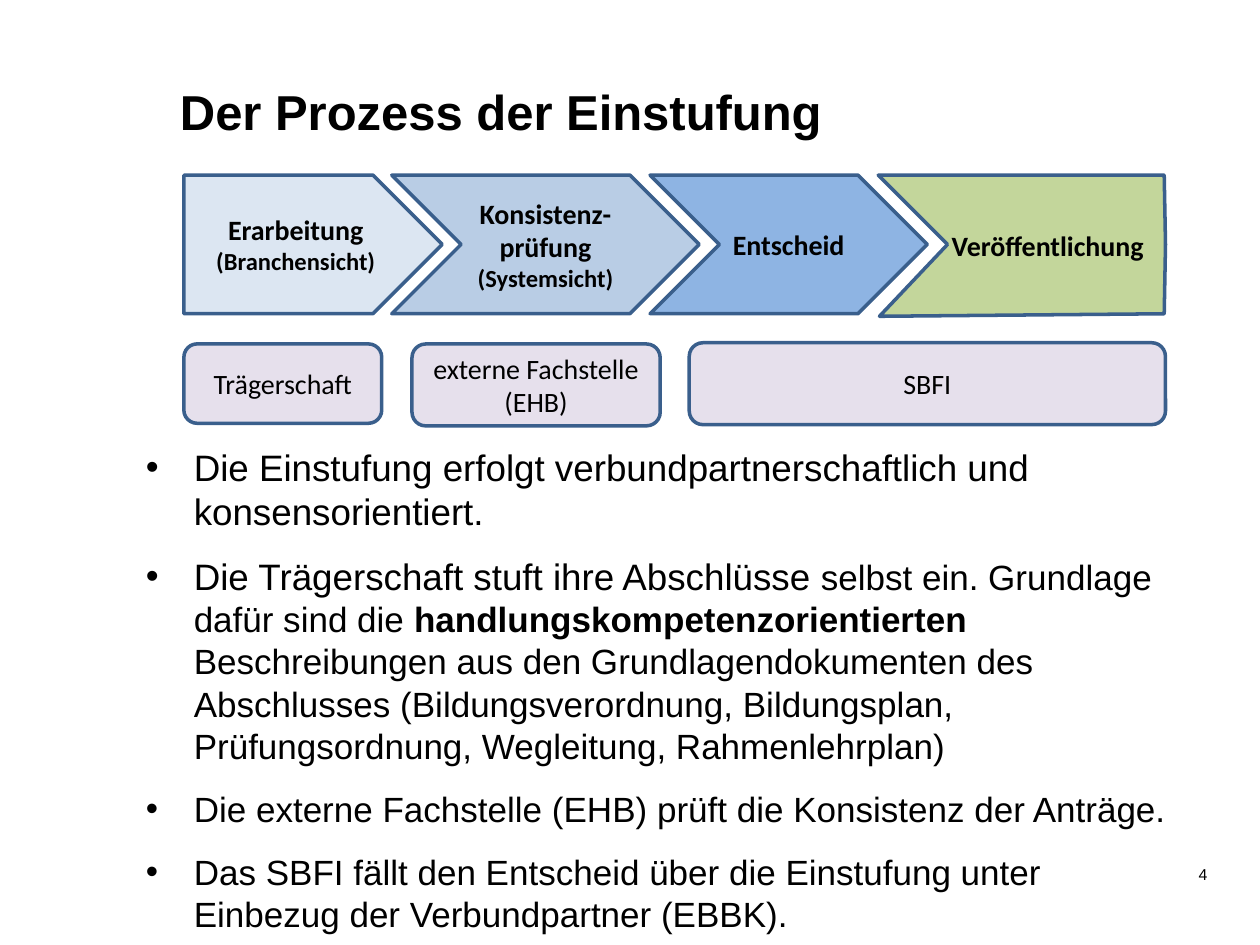
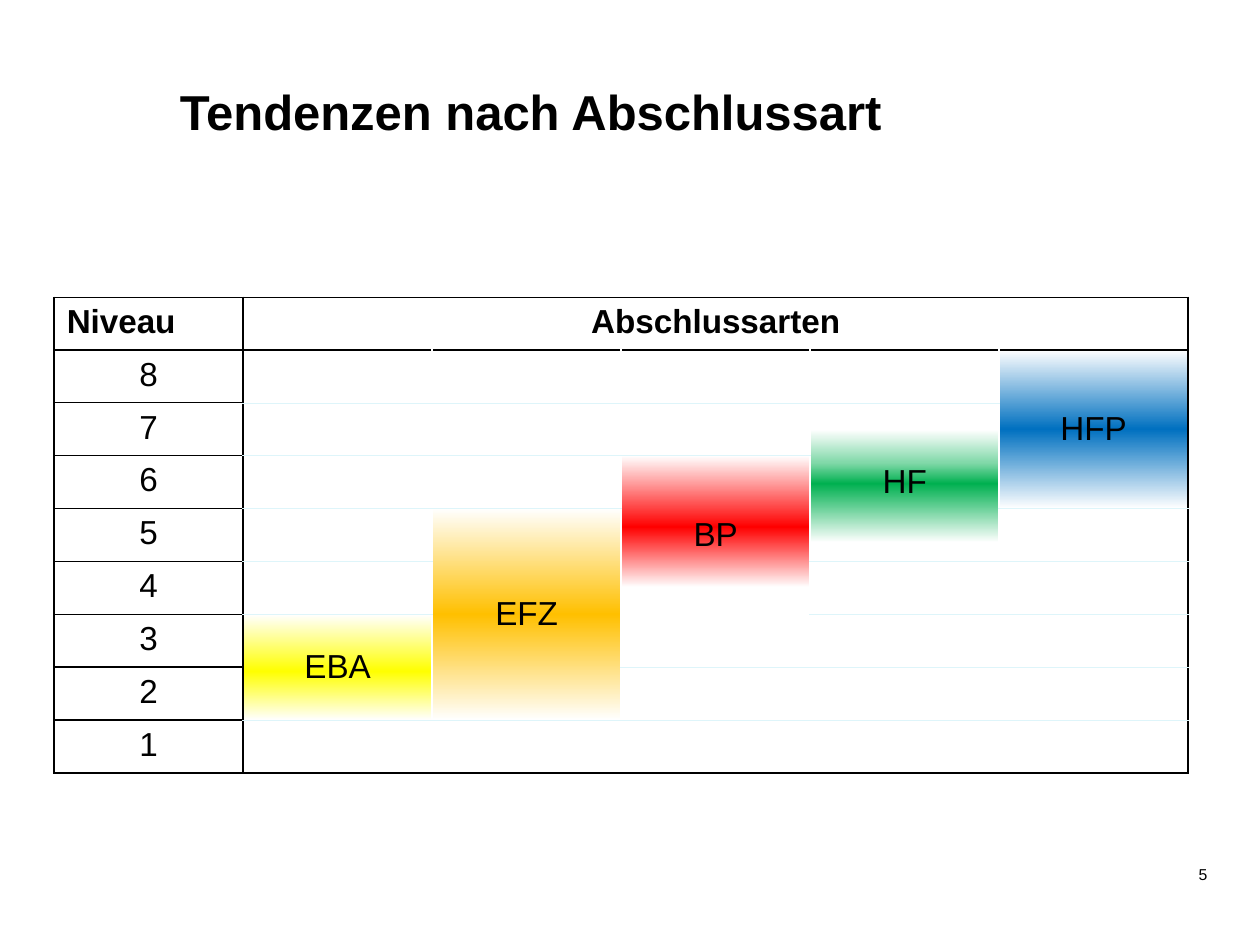
from dataclasses import dataclass

from lxml import etree
from pptx import Presentation
from pptx import util as u
from pptx.dml.color import RGBColor
from pptx.enum import shapes, text
from pptx.oxml import ns

COLS, ROWS = 100, 75
CELL = u.Inches(0.1)
CENTER, RIGHT = text.PP_ALIGN.CENTER, text.PP_ALIGN.RIGHT
MIDDLE = text.MSO_ANCHOR.MIDDLE


@dataclass(frozen=True)
class Theme:
    body_font: str = "Arial"
    shape_font: str = "Calibri"
    ink: str = "000000"
    paper: str = "FFFFFF"
    outline: str = "3A5F8C"
    steps: tuple = ("DCE6F2", "B9CDE5", "8EB4E3", "C3D69B")
    actor: str = "E6E0EC"
    hairline: str = "DEF5FA"
    title: float = 28
    lead: float = 21
    body: float = 20
    table: float = 19
    label: float = 16
    note: float = 14
    number: float = 9


T = Theme()

BULLETS = [
    [("Die Einstufung erfolgt verbundpartnerschaftlich und konsensorientiert.", T.lead, False)],
    [("Die Trägerschaft stuft ihre Abschlüsse ", T.lead, False),
     ("selbst ein. Grundlage dafür sind die ", T.body, False),
     ("handlungskompetenzorientierten ", T.body, True),
     ("Beschreibungen aus den Grundlagendokumenten des Abschlusses (Bildungsverordnung, "
      "Bildungsplan, Prüfungsordnung, Wegleitung, Rahmenlehrplan)", T.body, False)],
    [("Die externe Fachstelle (EHB) prüft die Konsistenz der Anträge.", T.body, False)],
    [("Das SBFI fällt den Entscheid über die Einstufung unter Einbezug der "
      "Verbundpartner (EBBK).", T.body, False)],
]

# name, column, first row, last row, gradient stops
DEGREES = [
    ("EBA", 1, 6, 7, [(0, T.paper), (54, "FFFF00"), (100, T.paper)]),
    ("EFZ", 2, 4, 7, [(0, T.paper), (50, "FFC000"), (100, T.paper)]),
    ("BP", 3, 3, 5, [(0, T.paper), (45, "FF0000"), (83, T.paper)]),
    ("HF", 4, 2, 4, [(17, T.paper), (38, "80D8A8"), (51, "00B050"), (88, T.paper)]),
    ("HFP", 5, 1, 3, [(0, T.paper), (50, "0070C0"), (100, T.paper)]),
]


def grid(*units):
    """Turn grid columns and rows into lengths."""
    return [round(n * CELL) for n in units]


def rgb(color):
    return RGBColor.from_string(color)


def add_run(p, content, size=T.body, font=T.body_font, bold=False):
    r = p.add_run()
    r.text = content
    r.font.size, r.font.name, r.font.bold = u.Pt(size), font, bold
    r.font.color.rgb = rgb(T.ink)


def write(tf, content, align=None, **style):
    """Write one paragraph into an empty frame, or add one after the others."""
    p = tf.paragraphs[-1]
    if p.runs:
        p = tf.add_paragraph()
    p.alignment = align
    add_run(p, content, **style)
    return p


def text_frame(s, *box):
    tf = s.shapes.add_textbox(*grid(*box)).text_frame
    tf.word_wrap = True
    return tf


def add_slide(prs, title, number):
    s = prs.slides.add_slide(prs.slide_layouts[6])
    tf = text_frame(s, 13.3, 5.5, 86.7, 7.8)
    tf.margin_top = u.Inches(0.1)
    write(tf, title, size=T.title, bold=True)
    p = write(text_frame(s, 72.4, 68, 24.4, 4), str(number), align=RIGHT, size=T.number)
    p.line_spacing = u.Pt(12)
    return s


def style_shape(sp, fill, lines):
    """Fill, outline and label a shape; lines are (text, size, bold)."""
    sp.shadow.inherit = False
    sp.fill.solid()
    sp.fill.fore_color.rgb = rgb(fill)
    sp.line.color.rgb = rgb(T.outline)
    sp.line.width = u.Pt(2)
    tf = sp.text_frame
    tf.word_wrap = True
    tf.vertical_anchor = MIDDLE
    for content, size, bold in lines:
        write(tf, content, align=CENTER, size=size, font=T.shape_font, bold=bold)


def add_process(s):
    kinds = shapes.MSO_SHAPE
    steps = [
        (kinds.PENTAGON, 14.6, 20.5, "Erarbeitung", "(Branchensicht)"),
        (kinds.CHEVRON, 31.1, 24.4, "Konsistenz-prüfung", "(Systemsicht)"),
        (kinds.CHEVRON, 51.6, 22, "Entscheid", None),
    ]
    for (kind, x, w, name, note), fill in zip(steps, T.steps):
        lines = [(name, T.label, True)] + ([(note, T.note, True)] if note else [])
        style_shape(s.shapes.add_shape(kind, *grid(x, 13.9, w, 11)), fill, lines)

    outline = [(92.4, 13.9), (92.5, 19.4), (92.4, 24.9), (69.8, 25.1), (75.2, 19.4)]
    fb = s.shapes.build_freeform(*grid(69.7, 13.9))
    fb.add_line_segments([grid(*point) for point in outline], close=True)
    publication = fb.convert_to_shape()
    style_shape(publication, T.steps[-1], [("Veröffentlichung", T.label, True)])
    publication.text_frame.margin_left = u.Inches(0.51)


def add_actors(s):
    actors = [
        (14.6, 27.3, 15.7, 6.3, ["Trägerschaft"]),
        (32.7, 27.3, 19.7, 6.5, ["externe Fachstelle", "(EHB)"]),
        (54.7, 27.2, 37.8, 6.5, ["SBFI"]),
    ]
    for *box, names in actors:
        sp = s.shapes.add_shape(shapes.MSO_SHAPE.ROUNDED_RECTANGLE, *grid(*box))
        style_shape(sp, T.actor, [(name, T.label, False) for name in names])


def add_bullets(s, items):
    tf = text_frame(s, 10.6, 34.8, 84.7, 40.2)
    for i, runs in enumerate(items):
        p = tf.paragraphs[0] if i == 0 else tf.add_paragraph()
        pPr = p._p.get_or_add_pPr()
        indent = u.Inches(0.38)
        pPr.set("marL", str(indent))
        pPr.set("indent", str(-indent))
        p.space_after = u.Pt(12)
        etree.SubElement(pPr, ns.qn("a:buFont"), typeface=T.body_font)
        etree.SubElement(pPr, ns.qn("a:buChar"), char="•")
        for content, size, bold in runs:
            add_run(p, content, size=size, bold=bold)


def add_color(parent, color):
    etree.SubElement(parent, ns.qn("a:srgbClr"), val=color)


def set_borders(cell, row, col):
    """Black frame and level column, white between degrees, hairlines between levels."""
    black, white, hair = (T.ink, 1), (T.paper, 1), (T.hairline, 0.25)
    framed = row == 0 or col == 0

    def level_edge(edge):
        if framed or edge in (1, 9):
            return black
        return white if (edge, col) == (6, 3) else hair

    edges = {
        "L": black if framed or col == 1 else white,
        "R": black if framed or col == 5 else white,
        "T": level_edge(row),
        "B": level_edge(row + 1),
    }
    tcPr = cell._tc.get_or_add_tcPr()
    for side, (color, width) in edges.items():
        ln = etree.SubElement(tcPr, ns.qn(f"a:ln{side}"), w=str(u.Pt(width)))
        add_color(etree.SubElement(ln, ns.qn("a:solidFill")), color)


def fill_gradient(cell, stops):
    """Replace the cell's fill by a vertical gradient."""
    cell.fill.background()
    tcPr = cell._tc.get_or_add_tcPr()
    tcPr.remove(tcPr.find(ns.qn("a:noFill")))
    grad = etree.SubElement(tcPr, ns.qn("a:gradFill"), rotWithShape="1")
    gs_list = etree.SubElement(grad, ns.qn("a:gsLst"))
    for share, color in stops:
        add_color(etree.SubElement(gs_list, ns.qn("a:gs"), pos=str(share * 1000)), color)
    etree.SubElement(grad, ns.qn("a:lin"), ang="5400000", scaled="0")


def add_level_table(s):
    table = s.shapes.add_table(9, 6, *grid(4.3, 23.6, 90, 37.7)).table
    table.first_row = table.horz_banding = False
    for column in table.columns:
        column.width = u.Inches(1.5)
    for i, row in enumerate(table.rows):
        row.height = u.Inches(0.42 if i else 0.41)
        for j, cell in enumerate(row.cells):
            set_borders(cell, i, j)
            cell.fill.solid()
            cell.fill.fore_color.rgb = rgb(T.paper)

    write(table.cell(0, 0).text_frame, "Niveau", size=T.table, bold=True)
    table.cell(0, 1).merge(table.cell(0, 5))
    write(table.cell(0, 1).text_frame, "Abschlussarten", align=CENTER, size=T.table, bold=True)
    for row in range(1, 9):
        write(table.cell(row, 0).text_frame, str(9 - row), align=CENTER, size=T.table)
    for name, col, first, last, stops in DEGREES:
        cell = table.cell(first, col)
        cell.merge(table.cell(last, col))
        cell.vertical_anchor = MIDDLE
        fill_gradient(cell, stops)
        write(cell.text_frame, name, align=CENTER, size=T.table)


def main():
    prs = Presentation()
    prs.slide_width, prs.slide_height = grid(COLS, ROWS)

    s = add_slide(prs, "Der Prozess der Einstufung", 4)
    add_bullets(s, BULLETS)
    add_process(s)
    add_actors(s)

    s = add_slide(prs, "Tendenzen nach Abschlussart", 5)
    add_level_table(s)

    prs.save("out.pptx")


if __name__ == "__main__":
    main()
